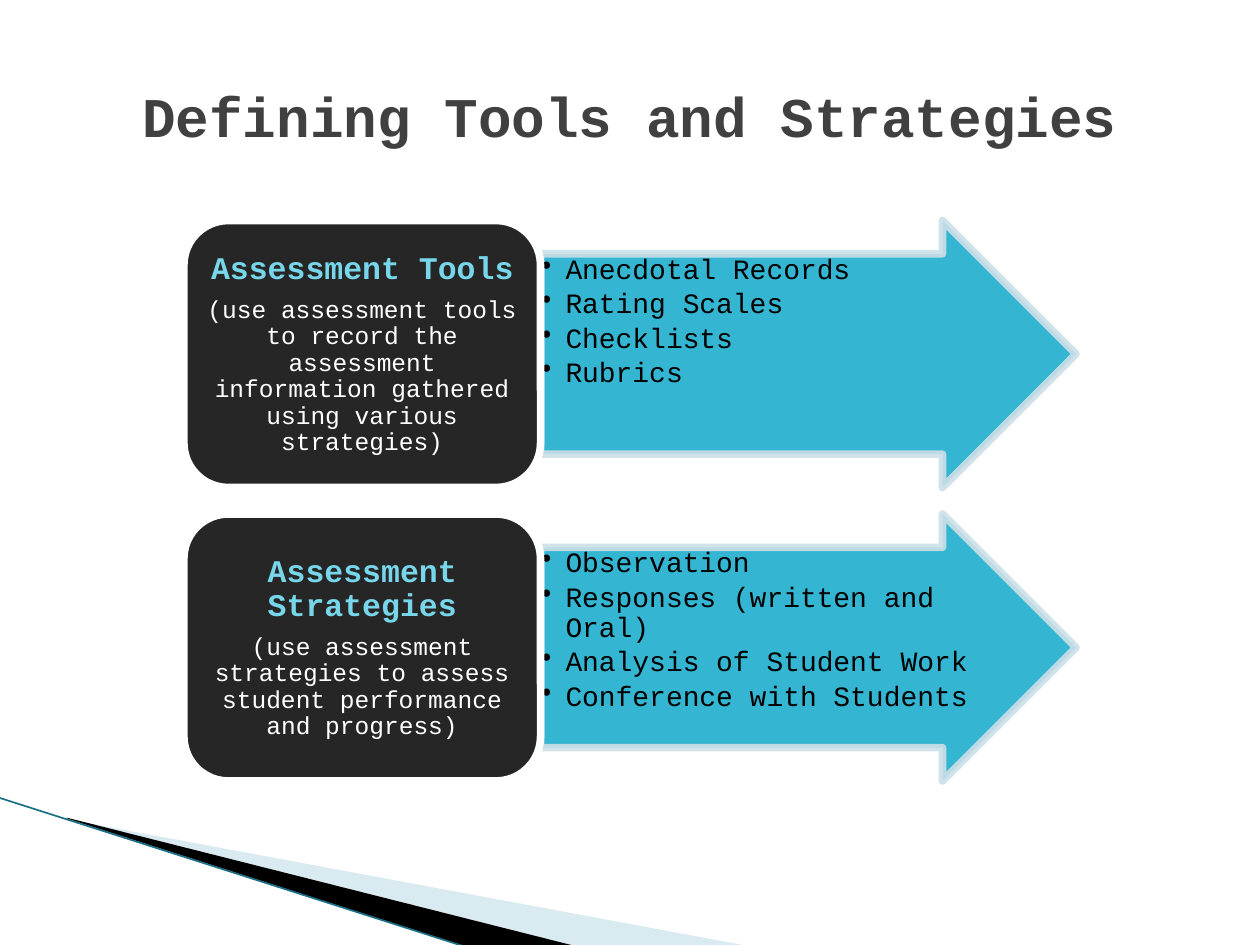
from dataclasses import dataclass

from lxml.etree import SubElement
from pptx import Presentation
from pptx.dml.color import RGBColor
from pptx.enum.shapes import MSO_CONNECTOR, MSO_SHAPE
from pptx.enum.text import MSO_ANCHOR, PP_ALIGN
from pptx.oxml.ns import qn
from pptx.util import Pt


@dataclass(frozen=True)
class Theme:
    font: str = "Courier New"
    title_color: str = "404040"
    heading_color: str = "78D6EA"
    card_text: str = "FFFFFF"
    bullet_text: str = "000000"
    card_fill: str = "262626"
    card_line: str = "FFFFFF"
    arrow_fill: str = "1FAECD"
    arrow_line: str = "CDE0E8"
    wedge_light: str = "A0CBDC"
    wedge_dark: str = "000000"
    edge_line: str = "1B6F86"
    title_size: float = 32
    heading_size: float = 18
    bullet_size: float = 16
    detail_size: float = 14
    outline: float = 4.33


def set_opacity(fill, percent):
    """Give a solid fill's colour an alpha value."""
    color = fill._xPr.find(qn("a:solidFill"))[0]
    SubElement(color, qn("a:alpha"), val=str(percent * 1000))


def write_text(para, text, *, font, size, color, bold=False, align=PP_ALIGN.LEFT,
               line_spacing=None, after=0, bullet_indent=None):
    """Fill one paragraph; after is a share of the type size."""
    para.alignment = align
    if line_spacing:
        para.line_spacing = line_spacing
    if after:
        para.space_after = Pt(round(size * after, 2))
    if bullet_indent:
        properties = para._p.get_or_add_pPr()
        properties.set("marL", str(Pt(bullet_indent)))
        properties.set("indent", str(-Pt(bullet_indent)))
        SubElement(properties, qn("a:buChar"), char="•")
    span = para.add_run()
    span.text = text
    span.font.name = font
    span.font.size = Pt(size)
    span.font.bold = bold
    span.font.color.rgb = RGBColor.from_string(color)


class SlideBuilder:
    def __init__(self, page, theme):
        self.page = page
        self.theme = theme

    def paint(self, shape, fill, line=None, opacity=100):
        shape.shadow.inherit = False
        shape.fill.solid()
        shape.fill.fore_color.rgb = RGBColor.from_string(fill)
        if line:
            shape.line.color.rgb = RGBColor.from_string(line)
            shape.line.width = Pt(self.theme.outline)
        else:
            shape.line.fill.background()
        if opacity < 100:
            set_opacity(shape.fill, opacity)
            if line:
                set_opacity(shape.line.fill, opacity)

    def wedge(self, points, fill, opacity=100):
        start, *rest = [(Pt(x), Pt(y)) for x, y in points]
        builder = self.page.shapes.build_freeform(*start)
        builder.add_line_segments(rest, close=True)
        self.paint(builder.convert_to_shape(), fill, opacity=opacity)

    def line(self, start, end, color, width):
        connector = self.page.shapes.add_connector(
            MSO_CONNECTOR.STRAIGHT, *(Pt(value) for value in (*start, *end)))
        connector.line.color.rgb = RGBColor.from_string(color)
        connector.line.width = Pt(width)
        SubElement(connector._element.spPr, qn("a:effectLst"))

    def shape(self, kind, area, fill, line, opacity=100, adjustments=()):
        shape = self.page.shapes.add_shape(kind, *(Pt(value) for value in area))
        for index, value in enumerate(adjustments):
            shape.adjustments[index] = value
        self.paint(shape, fill, line, opacity)

    def text(self, area, items, insets, anchor=MSO_ANCHOR.TOP):
        """Add a text box; items are pairs of text and its format."""
        box = self.page.shapes.add_textbox(*(Pt(value) for value in area))
        frame = box.text_frame
        frame.word_wrap = True
        frame.vertical_anchor = anchor
        frame.margin_left = frame.margin_right = Pt(insets[0])
        frame.margin_top = frame.margin_bottom = Pt(insets[1])
        for index, (text, style) in enumerate(items):
            para = frame.add_paragraph() if index else frame.paragraphs[0]
            write_text(para, text, font=self.theme.font, **style)

    def row(self, top, heading, detail, bullets):
        theme = self.theme
        height, card_left, card_width = 152.6, 105.1, 203.8
        arrow_left = card_left + card_width

        # Arrow with its bullet list
        self.shape(MSO_SHAPE.RIGHT_ARROW, (arrow_left, top, 306, height),
                   theme.arrow_fill, theme.arrow_line, opacity=90,
                   adjustments=(0.75, 0.5))
        bullet_style = dict(size=theme.bullet_size, color=theme.bullet_text,
                            line_spacing=0.9, after=0.15, bullet_indent=13.5)
        self.text((arrow_left, top + height / 8, 249, height * 0.75),
                  [(bullet, bullet_style) for bullet in bullets], (0.8, 0.8))

        # Card with heading and explanation
        self.shape(MSO_SHAPE.ROUNDED_RECTANGLE, (card_left, top, card_width, height),
                   theme.card_fill, theme.card_line)
        card_style = dict(align=PP_ALIGN.CENTER, line_spacing=0.9, after=0.35)
        inset = 7.45
        self.text((card_left + inset, top + inset,
                   card_width - 2 * inset, height - 2 * inset),
                  [(heading, dict(card_style, size=theme.heading_size,
                                  color=theme.heading_color, bold=True)),
                   (detail, dict(card_style, size=theme.detail_size,
                                 color=theme.card_text))],
                  (5.4, 2.7), MSO_ANCHOR.MIDDLE)


def main():
    deck = Presentation()
    deck.slide_width, deck.slide_height = Pt(720), Pt(540)
    page = deck.slides.add_slide(deck.slide_layouts[6])
    theme = Theme()
    slide = SlideBuilder(page, theme)

    # Corner decoration
    slide.wedge([(39.6, 468.4), (428.4, 540.7), (328.3, 540.7), (39.6, 468)],
                theme.wedge_light, opacity=40)
    slide.wedge([(38.2, 467.3), (329, 540.7), (267.8, 541.4), (38.9, 468)],
                theme.wedge_dark)
    slide.line((-0.7, 455.8), (267.1, 541.4), theme.edge_line, 0.95)

    # Definition rows
    rows = [
        ("Assessment Tools",
         "(use assessment tools to record the assessment information gathered "
         "using various strategies)",
         ["Anecdotal Records", "Rating Scales", "Checklists", "Rubrics"]),
        ("Assessment Strategies",
         "(use assessment strategies to assess student performance and progress)",
         ["Observation", "Responses (written and Oral)",
          "Analysis of Student Work", "Conference with Students"]),
    ]
    first_top, pitch = 126, 167.7
    for index, content in enumerate(rows):
        slide.row(first_top + index * pitch, *content)

    # Title
    slide.text((72, 43.2, 576, 46),
               [("Defining Tools and Strategies",
                 dict(size=theme.title_size, color=theme.title_color, bold=True,
                      align=PP_ALIGN.CENTER))], (7.2, 3.6))

    deck.save("out.pptx")


if __name__ == "__main__":
    main()
